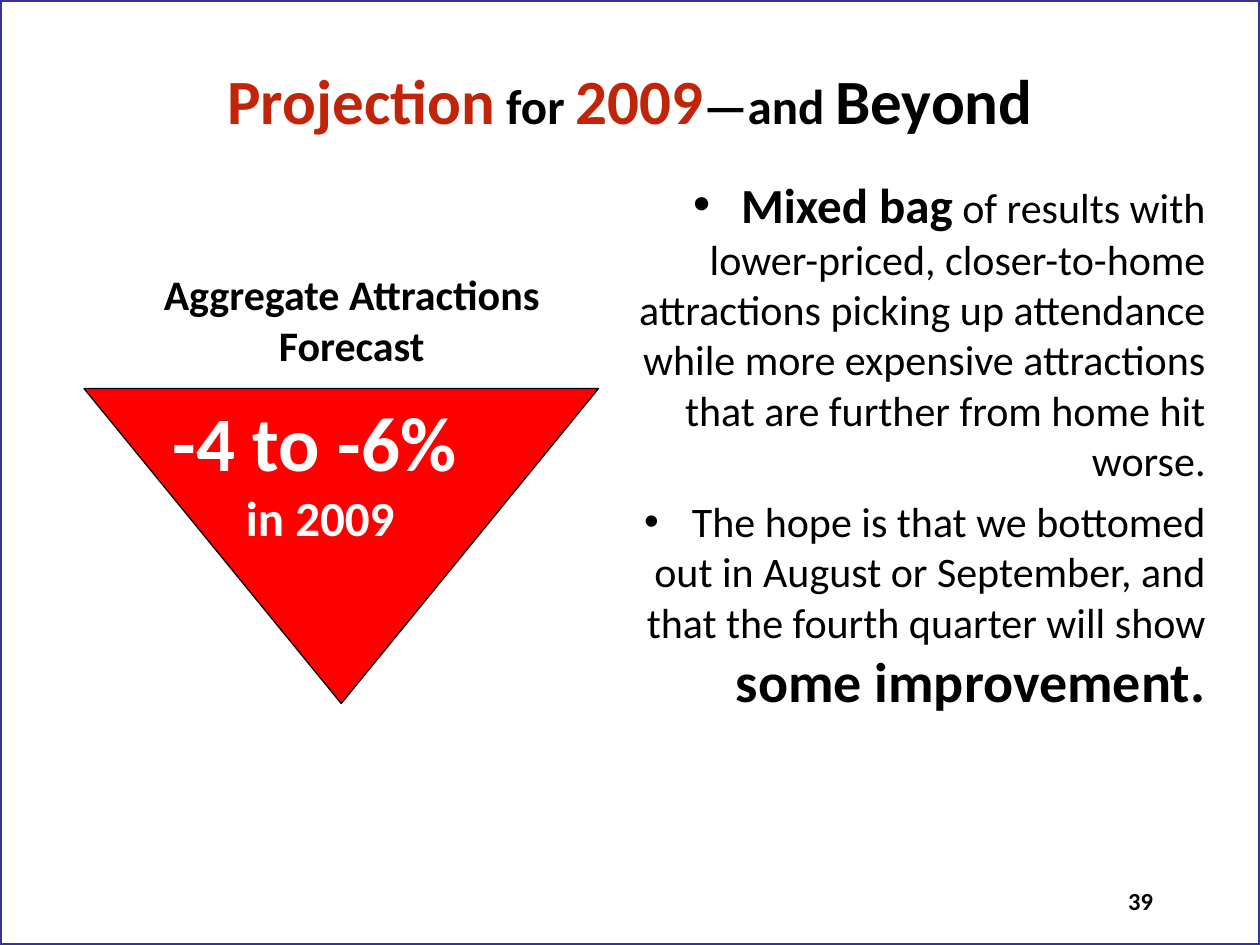
import pptx
import pptx.util
import pptx.dml.color
import pptx.enum.shapes
import pptx.enum.text
import pptx.oxml.ns
import lxml.etree
from dataclasses import dataclass

SHAPE = pptx.enum.shapes.MSO_SHAPE
ALIGN = pptx.enum.text.PP_ALIGN
ANCHOR = pptx.enum.text.MSO_ANCHOR


@dataclass(frozen=True)
class Theme:
    font: str = "Calibri"
    ink: str = "000000"
    paper: str = "FFFFFF"
    frame: str = "333399"
    accent: str = "C2240A"
    alert: str = "FF0000"
    dot: str = "010000"
    tiny: int = 14
    body: int = 24
    lead: int = 28
    large: int = 32
    head: int = 36
    huge: int = 44


THEME = Theme()
COLS, ROWS = 120, 90  # grid cells of 1/12 inch
CELL = pptx.util.Inches(1 / 12)


def place(box):
    return [round(CELL * n) for n in box]


def color(code):
    return pptx.dml.color.RGBColor.from_string(code)


def bullet(para, indent):
    props = para._p.get_or_add_pPr()
    props.set("marL", str(indent))
    props.set("indent", str(-indent))

    def add(parent, tag, **attrs):
        return lxml.etree.SubElement(parent, pptx.oxml.ns.qn(tag), **attrs)

    add(add(props, "a:buClr"), "a:srgbClr", val=THEME.dot)
    add(props, "a:buFont", typeface="Arial")
    add(props, "a:buChar", char="•")


def write(slide, box, paras, align=ALIGN.CENTER, anchor=ANCHOR.TOP,
          ink=THEME.ink, indent=None, gap=0):
    """Each paragraph is a list of (text, size, bold[, colour]) runs; None breaks the line."""
    frame = slide.shapes.add_textbox(*place(box)).text_frame
    frame.word_wrap = True
    frame.vertical_anchor = anchor
    for i, runs in enumerate(paras):
        para = frame.add_paragraph() if i else frame.paragraphs[0]
        para.alignment = align
        if indent:
            bullet(para, indent)
        if i:
            para.space_before = pptx.util.Pt(gap)
        for part in runs:
            if part is None:
                para.add_line_break()
                continue
            text, size, bold, *tint = part
            run = para.add_run()
            run.text = text
            run.font.name = THEME.font
            run.font.size = pptx.util.Pt(size)
            run.font.bold = bold
            run.font.color.rgb = color(tint[0] if tint else ink)


def draw(slide, kind, box, fill, line, width):
    shape = slide.shapes.add_shape(kind, *place(box))
    shape.shadow.inherit = False
    shape.fill.solid()
    shape.fill.fore_color.rgb = color(fill)
    shape.line.color.rgb = color(line)
    shape.line.width = pptx.util.Pt(width)
    return shape


def title(slide, box):
    runs = [("Projection", THEME.head, True, THEME.accent),
            (" for ", THEME.lead, True),
            ("2009", THEME.head, True, THEME.accent),
            ("—and ", THEME.lead, True),
            ("Beyond", THEME.head, True)]
    write(slide, box, [runs], anchor=ANCHOR.MIDDLE)


def outlook(slide, box):
    paras = [
        [("Mixed bag", THEME.lead, True),
         (" of results with lower-priced, closer-to-home attractions picking up "
          "attendance while more expensive attractions that are further from "
          "home hit worse.", THEME.body, False)],
        [("The hope is that we bottomed out in August or September, and that "
          "the fourth quarter will show ", THEME.body, False),
         ("some improvement.", THEME.large, True)],
    ]
    write(slide, box, paras, align=ALIGN.RIGHT,
          indent=pptx.util.Inches(0.38), gap=6)


def forecast(slide, box):
    left, top, width, height = box
    label = 12  # rows kept for the heading
    base = top + label
    # Downward triangle
    mark = draw(slide, SHAPE.ISOSCELES_TRIANGLE,
                (left, base, width, height - label), THEME.alert, THEME.ink, 0.75)
    mark.rotation = 180
    # Figure inside the triangle
    write(slide, (left + 2, base, width - 8, 15.6),
          [[("-4 to -6%", THEME.huge, True), (" ", THEME.lead, True), None,
            ("in 2009", THEME.lead, True)]], ink=THEME.paper)
    # Heading above it
    write(slide, (left + 1, top, width, label - 1),
          [[("Aggregate Attractions Forecast", THEME.body, True)]])


def number(slide, box):
    write(slide, box, [[("39", THEME.tiny, True)]], align=ALIGN.RIGHT)


def main():
    deck = pptx.Presentation()
    deck.slide_width, deck.slide_height = place((COLS, ROWS))
    slide = deck.slides.add_slide(deck.slide_layouts[6])
    # Page frame
    draw(slide, SHAPE.RECTANGLE, (0, 0, COLS, ROWS), THEME.paper, THEME.frame, 2)
    # Regions: left, top, width, height in grid cells
    number(slide, (83, 83.75, 28, 6.25))
    title(slide, (6, 2, 108, 15))
    outlook(slide, (55, 16, 61, 59.4))
    forecast(slide, (8, 25, 49, 42))
    deck.save("out.pptx")


if __name__ == "__main__":
    main()
